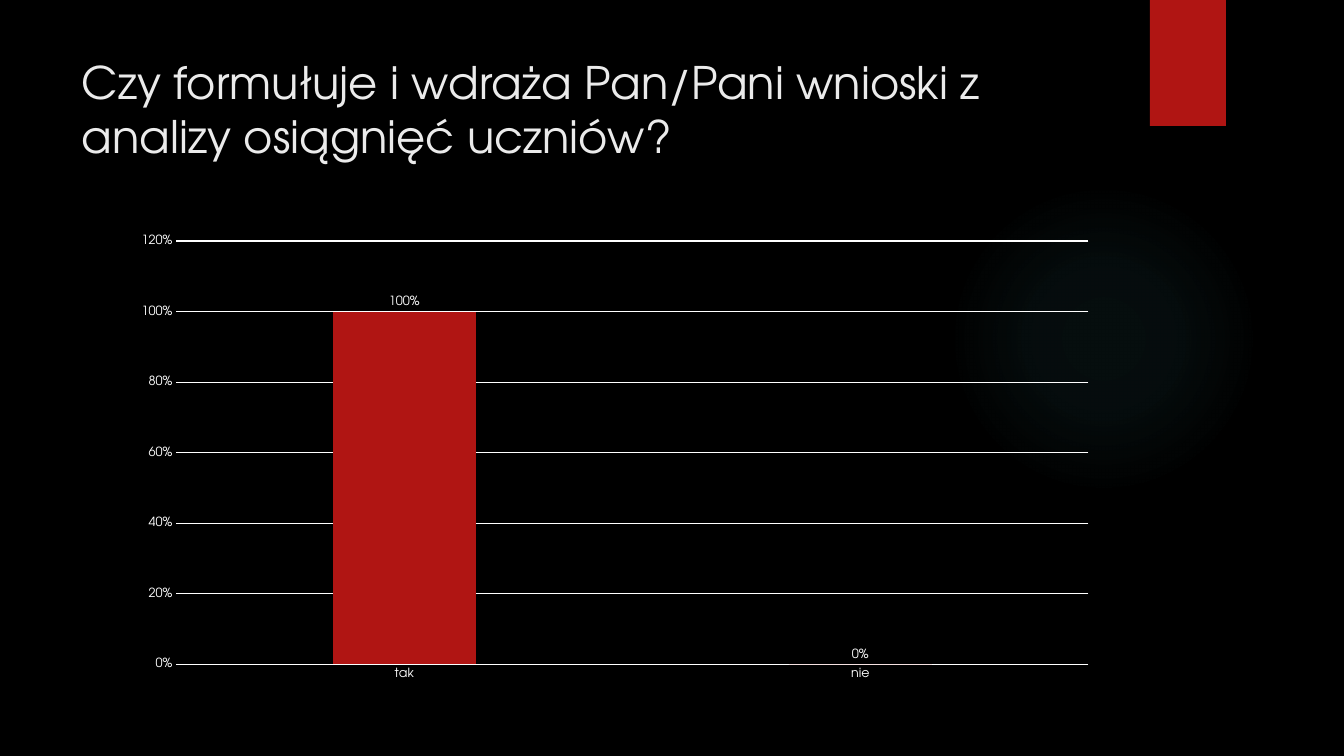
from pptx import Presentation, util as u
from pptx.chart.data import CategoryChartData
from pptx.dml.color import RGBColor
from pptx.enum import chart as charts, shapes, text
from pptx.oxml import parse_xml
from pptx.oxml.ns import nsdecls

EMU_PER_PX = 914400 / 100.8
FONT = "TeX Gyre Adventor"
COLORS = {"background": "000000", "accent": "B01513", "title": "EBEBEB",
          "chart": "FFFFFF", "glow": "50B9C1"}


def px(*lengths):
    return [u.Emu(round(length * EMU_PER_PX)) for length in lengths]


class SurveySlide:
    """Draws the elements of a dark survey slide in one style."""

    def __init__(self, presentation):
        self.slide = presentation.slides.add_slide(presentation.slide_layouts[6])
        self.paint(self.slide.background.fill, "background")

    def paint(self, fill, color):
        fill.solid()
        fill.fore_color.rgb = RGBColor.from_string(COLORS[color])

    def style_font(self, font, size, color):
        font.name = FONT
        font.size = u.Pt(size)
        font.bold = False
        font.color.rgb = RGBColor.from_string(COLORS[color])

    def style_line(self, line):
        self.paint(line.fill, "chart")
        line.width = u.Pt(0.75)

    def block(self, kind, left, top, width, height, color):
        shape = self.slide.shapes.add_shape(kind, *px(left, top, width, height))
        shape.shadow.inherit = False
        shape.line.fill.background()
        self.paint(shape.fill, color)
        return shape

    def glow(self, left, top, size, stops):
        shape = self.block(shapes.MSO_SHAPE.OVAL, left, top, size, size, "glow")
        stop_xml = "".join(
            f'<a:gs pos="{position * 1000}"><a:srgbClr val="{COLORS["glow"]}">'
            f'<a:alpha val="{alpha * 1000}"/></a:srgbClr></a:gs>'
            for position, alpha in stops)
        gradient = parse_xml(
            f'<a:gradFill {nsdecls("a")} rotWithShape="1"><a:gsLst>{stop_xml}</a:gsLst>'
            '<a:path path="circle"><a:fillToRect l="50000" t="50000" r="50000" b="50000"/>'
            '</a:path></a:gradFill>')
        properties = shape._element.spPr
        properties.replace(properties.find("{*}solidFill"), gradient)

    def title(self, left, top, width, height, words):
        frame = self.slide.shapes.add_textbox(*px(left, top, width, height)).text_frame
        frame.word_wrap = True
        frame.vertical_anchor = text.MSO_ANCHOR.TOP
        frame.text = words
        self.style_font(frame.paragraphs[0].runs[0].font, 32, "title")

    def column_chart(self, left, top, width, height, answers):
        data = CategoryChartData(number_format="0%")
        data.categories = list(answers)
        data.add_series("Series 1", list(answers.values()))
        chart = self.slide.shapes.add_chart(
            charts.XL_CHART_TYPE.COLUMN_CLUSTERED, *px(left, top, width, height), data).chart
        chart.has_legend = False
        chart.has_title = False
        self.style_font(chart.font, 10, "chart")
        for axis in (chart.category_axis, chart.value_axis):
            axis.major_tick_mark = axis.minor_tick_mark = charts.XL_TICK_MARK.NONE
            self.style_font(axis.tick_labels.font, 9, "chart")
        self.style_line(chart.category_axis.format.line)

        values = chart.value_axis
        values.minimum_scale, values.maximum_scale, values.major_unit = 0, 1.2, 0.2
        values.tick_labels.number_format = "0%"
        values.tick_labels.number_format_is_linked = False
        values.format.line.fill.background()
        self.style_line(values.major_gridlines.format.line)

        plot = chart.plots[0]
        plot.gap_width, plot.overlap = 219, -27
        plot.vary_by_categories = False
        series = plot.series[0]
        series.invert_if_negative = False
        self.paint(series.format.fill, "accent")
        labels = series.data_labels
        labels.show_value = True
        labels.number_format = "0%"
        labels.number_format_is_linked = False
        labels.position = charts.XL_LABEL_POSITION.OUTSIDE_END
        self.style_font(labels.font, 9, "chart")


def main():
    presentation = Presentation()
    presentation.slide_width, presentation.slide_height = px(1344, 756)
    survey = SurveySlide(presentation)
    survey.glow(949, 184, 310, [(0, 7), (36, 6), (69, 0), (100, 0)])
    survey.block(shapes.MSO_SHAPE.RECTANGLE, 1150, 0, 76, 126, "accent")
    survey.title(72, 50, 1037, 154,
                 "Czy formułuje i wdraża Pan/Pani wnioski z analizy osiągnięć uczniów?")
    survey.column_chart(122, 226, 986, 463, {"tak": 1, "nie": 0})
    presentation.save("out.pptx")


if __name__ == "__main__":
    main()
